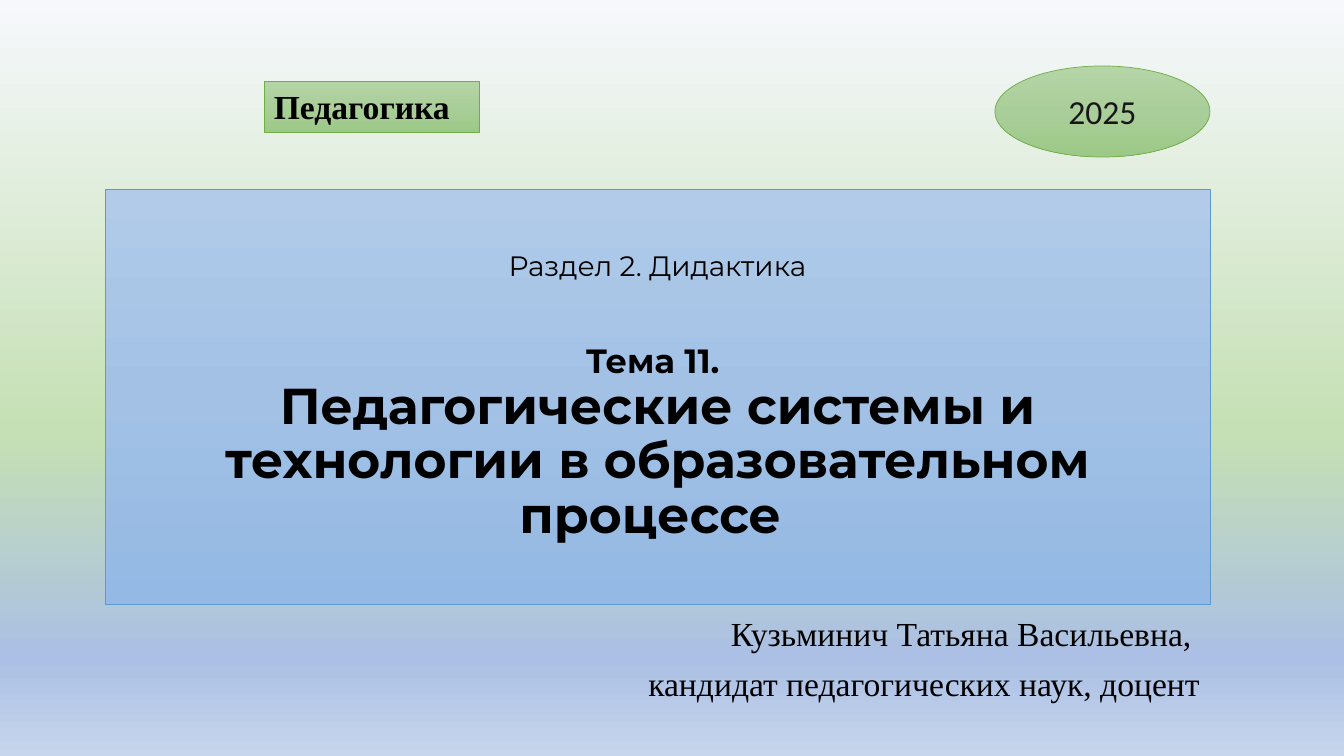
import pptx
import pptx.util
import pptx.dml.color
import pptx.enum.shapes
import pptx.enum.text
import pptx.oxml
import pptx.oxml.ns

RGB = pptx.dml.color.RGBColor
ALIGN = pptx.enum.text.PP_ALIGN
ANCHOR = pptx.enum.text.MSO_ANCHOR
SHAPE = pptx.enum.shapes.MSO_SHAPE
Pt = pptx.util.Pt

BLACK = RGB(0x00, 0x00, 0x00)
DARK = RGB(0x18, 0x17, 0x17)
BLUE = RGB(0x5B, 0x9B, 0xD5)
GREEN = RGB(0x70, 0xAD, 0x47)

# Gradient stops: percent, colour
SKY = [(0, RGB(0xF6, 0xF8, 0xFC)), (57, RGB(0xC5, 0xE0, 0xB4)),
       (87, RGB(0xAB, 0xC0, 0xE4)), (100, RGB(0xC7, 0xD5, 0xED))]
BLUES = [(0, RGB(0xB1, 0xCB, 0xE9)), (50, RGB(0xA3, 0xC1, 0xE5)),
         (100, RGB(0x93, 0xB9, 0xE4))]
GREENS = [(0, RGB(0xB5, 0xD5, 0xA7)), (50, RGB(0xAA, 0xCE, 0x9A)),
          (100, RGB(0x9C, 0xC9, 0x87))]

# Text lines: text, size, bold, space before
TITLE = [("Раздел 2. Дидактика", 20, False, 0),
         ("Тема 11. ", 24, True, 44),
         ("Педагогические системы и технологии в образовательном процессе ",
          36, True, 0)]
AUTHOR = [("Кузьминич Татьяна Васильевна, ", 24, False, 10),
          ("кандидат педагогических наук, доцент", 24, False, 10)]
COURSE = [("Педагогика", 24, True, 0)]
YEAR = [("2025", 24, False, 0)]

# Left, top, width, height in px
TITLE_BOX = (105, 189, 1105, 415)
AUTHOR_BOX = (173, 612, 1037, 107)
COURSE_BOX = (264, 81, 215, 51)
YEAR_BOX = (995, 66, 215, 91)
TITLE_FOOT = 60


def px(num):
    return round(num * 914400 / 100.8)


def shade(fill, owner, stops):
    """Fill from top to bottom with any number of stops."""
    fill.gradient()
    fill.gradient_angle = 270
    rows = owner.element.find(".//" + pptx.oxml.ns.qn("a:gsLst"))
    for old in list(rows):
        rows.remove(old)
    for spot, tone in stops:
        rows.append(pptx.oxml.parse_xml(
            f'<a:gs {pptx.oxml.ns.nsdecls("a")} pos="{spot * 1000}">'
            f'<a:srgbClr val="{tone}"/></a:gs>'))


def place(shape, box):
    shape.left, shape.top, shape.width, shape.height = map(px, box)


def paint(shape, stops, edge):
    shade(shape.fill, shape, stops)
    shape.line.color.rgb = edge
    shape.line.width = Pt(0.5)
    shape.shadow.inherit = False


def write(shape, lines, face, align, anchor, tone=BLACK, pitch=1.0):
    frame = shape.text_frame
    frame.word_wrap = True
    frame.auto_size = pptx.enum.text.MSO_AUTO_SIZE.NONE
    frame.vertical_anchor = anchor
    frame.text = "\n".join(line[0] for line in lines)
    for para, (_, size, bold, gap) in zip(frame.paragraphs, lines):
        para.alignment = align
        para.line_spacing = pitch
        para.space_before = Pt(gap)
        para.space_after = Pt(0)
        para.font.name = face
        para.font.size = Pt(size)
        para.font.bold = bold
        para.font.color.rgb = tone


def main():
    deck = pptx.Presentation()
    deck.slide_width, deck.slide_height = px(1344), px(756)
    slide = deck.slides.add_slide(deck.slide_layouts[0])
    shade(slide.background.fill, slide, SKY)

    title = slide.shapes.title
    place(title, TITLE_BOX)
    paint(title, BLUES, BLUE)
    write(title, TITLE, "Montserrat", ALIGN.CENTER, ANCHOR.BOTTOM, pitch=0.9)
    title.text_frame.margin_bottom = px(TITLE_FOOT)

    author = slide.placeholders[1]
    place(author, AUTHOR_BOX)
    write(author, AUTHOR, "Times New Roman", ALIGN.RIGHT, ANCHOR.TOP, pitch=0.9)

    course = slide.shapes.add_shape(SHAPE.RECTANGLE, *map(px, COURSE_BOX))
    paint(course, GREENS, GREEN)
    write(course, COURSE, "Times New Roman", ALIGN.LEFT, ANCHOR.TOP)

    year = slide.shapes.add_shape(SHAPE.OVAL, *map(px, YEAR_BOX))
    paint(year, GREENS, GREEN)
    write(year, YEAR, "Calibri", ALIGN.CENTER, ANCHOR.MIDDLE, DARK)

    deck.save("out.pptx")


if __name__ == "__main__":
    main()
